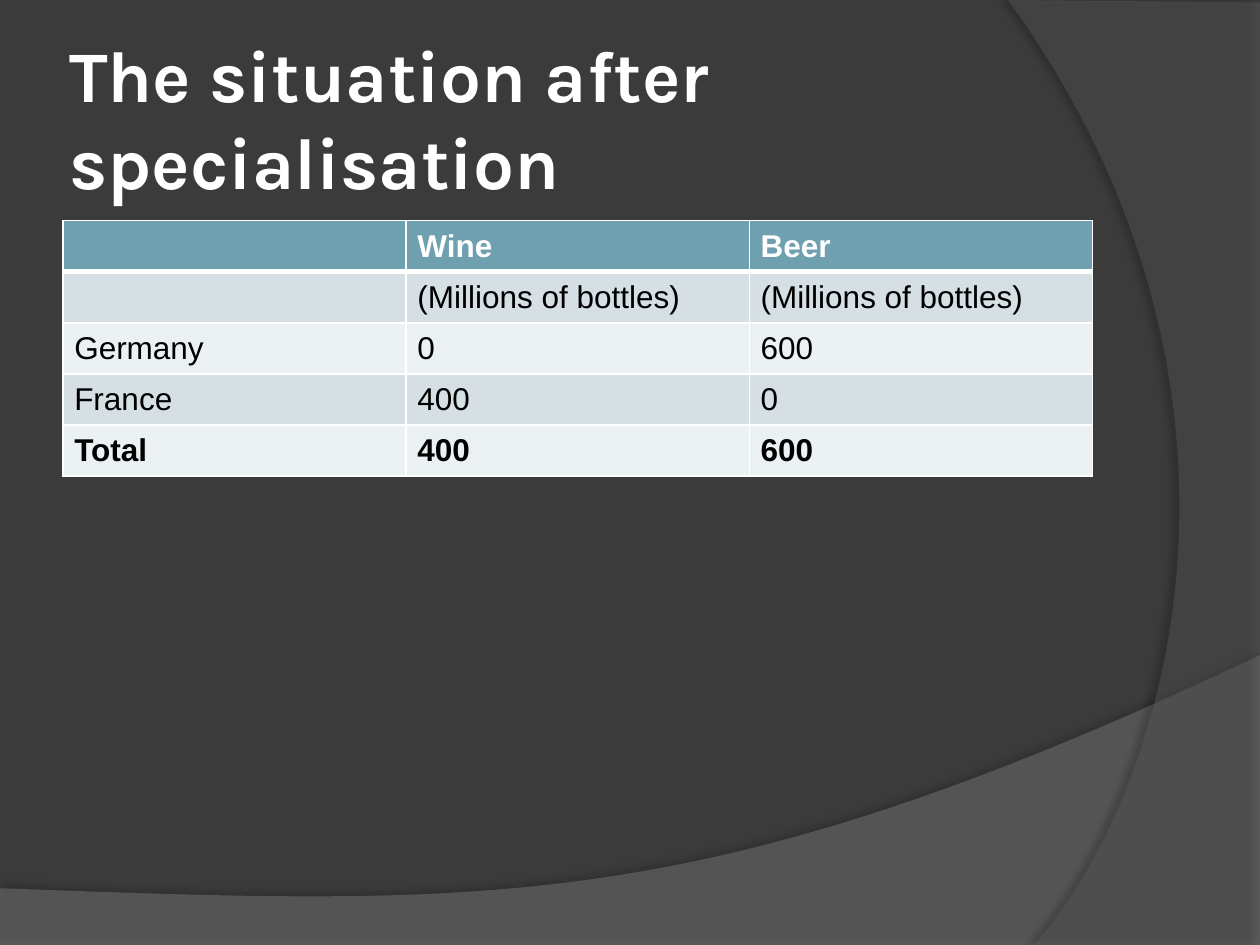
from lxml.etree import SubElement
from pptx import Presentation
from pptx.dml.color import RGBColor
from pptx.enum.text import MSO_ANCHOR as Anchor, MSO_AUTO_SIZE as AutoSize, PP_ALIGN as Align
from pptx.oxml.ns import qn
from pptx.util import Inches, Pt

WHITE, BLACK, BACKGROUND = "FFFFFF", "000000", "3B3B3B"
HEADER, BANDS = "6EA0B0", ("D5DFE4", "EBF0F2")
ROWS = [
    ("", "Wine", "Beer"),
    ("", "(Millions of bottles)", "(Millions of bottles)"),
    ("Germany", "0", "600"),
    ("France", "400", "0"),
    ("Total", "400", "600"),
]


def color(value):
    return RGBColor.from_string(value)


def curve(start, control_1, control_2, end, steps=60):
    points = []
    for step in range(steps + 1):
        t = step / steps
        weights = ((1 - t) ** 3, 3 * t * (1 - t) ** 2, 3 * t * t * (1 - t), t ** 3)
        corners = (start, control_1, control_2, end)
        points.append(tuple(sum(w * c[axis] for w, c in zip(weights, corners)) for axis in (0, 1)))
    return points


class SlideBuilder:
    """Holds the fonts and the current slide, and adds each kind of element."""

    def __init__(self, slide, title_font="Karla", body_font="Arial"):
        self.slide = slide
        self.title_font = title_font
        self.body_font = body_font

    def background(self, fill):
        self.slide.background.fill.solid()
        self.slide.background.fill.fore_color.rgb = color(fill)

    def add_run(self, paragraph, text, font, size, text_color, bold):
        run = paragraph.add_run()
        run.text = text
        run.font.name = font
        run.font.size = Pt(size)
        run.font.bold = bold
        run.font.color.rgb = color(text_color)

    def title(self, text, left, top, width, height):
        shape = self.slide.shapes.title
        shape.left, shape.top = Inches(left), Inches(top)
        shape.width, shape.height = Inches(width), Inches(height)
        frame = shape.text_frame
        frame.word_wrap = True
        frame.auto_size = AutoSize.NONE
        frame.vertical_anchor = Anchor.MIDDLE
        frame.margin_left = frame.margin_right = Inches(0.05)
        frame.margin_top = frame.margin_bottom = Inches(0.05)
        paragraph = frame.paragraphs[0]
        paragraph.alignment = Align.LEFT
        self.add_run(paragraph, text, self.title_font, 41.4, WHITE, True)

    def wave(self, points, fill, opacity, shadow_opacity, distance, direction):
        points = [(Inches(x), Inches(y)) for x, y in points]
        builder = self.slide.shapes.build_freeform(*points[0])
        builder.add_line_segments(points[1:], close=True)
        shape = builder.convert_to_shape()
        shape.fill.solid()
        shape.fill.fore_color.rgb = color(fill)
        shape.line.fill.background()
        shape.shadow.inherit = False
        properties = shape.element.spPr
        fill_color = properties.find(qn("a:solidFill")).find(qn("a:srgbClr"))
        SubElement(fill_color, qn("a:alpha"), val=str(opacity * 1000))
        shadow = SubElement(
            properties.find(qn("a:effectLst")), qn("a:outerShdw"), blurRad=str(Pt(4)),
            dist=str(Pt(distance)), dir=str(direction * 60000), rotWithShape="0")
        shadow_color = SubElement(shadow, qn("a:srgbClr"), val=BLACK)
        SubElement(shadow_color, qn("a:alpha"), val=str(shadow_opacity * 1000))

    def borders(self, cell, top, bottom):
        properties = cell._tc.get_or_add_tcPr()
        for index, (side, width) in enumerate(zip("LRTB", (1, 1, top, bottom))):
            line = SubElement(properties, qn(f"a:ln{side}"), w=str(Pt(width)))
            fill = SubElement(line, qn("a:solidFill"))
            SubElement(fill, qn("a:srgbClr"), val=WHITE)
            properties.insert(index, line)

    def table(self, rows, left, top, width, height):
        frame = self.slide.shapes.add_table(
            len(rows), len(rows[0]), Inches(left), Inches(top), Inches(width), Inches(height))
        for row_index, row in enumerate(rows):
            is_header = row_index == 0
            is_bold = is_header or row_index == len(rows) - 1
            for column_index, text in enumerate(row):
                cell = frame.table.cell(row_index, column_index)
                cell.vertical_anchor = Anchor.MIDDLE
                cell.margin_left = cell.margin_right = Inches(0.09)
                cell.margin_top = cell.margin_bottom = Inches(0.05)
                cell.fill.solid()
                cell.fill.fore_color.rgb = color(HEADER if is_header else BANDS[(row_index - 1) % 2])
                self.borders(cell, 3 if row_index == 1 else 1, 3 if is_header else 1)
                if text:
                    self.add_run(cell.text_frame.paragraphs[0], text, self.body_font, 18,
                                 WHITE if is_header else BLACK, is_bold)


def main():
    presentation = Presentation()
    presentation.slide_width, presentation.slide_height = Inches(10), Inches(7.5)
    builder = SlideBuilder(presentation.slides.add_slide(presentation.slide_layouts[5]))
    builder.background(BACKGROUND)
    bottom_edge = curve((10, 5.2), (5.59, 7.29), (3.91, 7.19), (0, 7.05))
    builder.wave([(0, 7.51), (10, 7.51), *bottom_edge], "7F7F7F", 45, 35, 3.5, 270)
    right_edge = curve((8.21, 7.5), (9.35, 6.19), (10.18, 3), (8, 0))
    builder.wave([(10, 0.02), (10, 7.5), *right_edge], "5E5E5E", 40, 45, 4, 180)
    builder.title("The situation after specialisation", 0.5, 0.3, 8.17, 1.25)
    builder.table(ROWS, 0.5, 1.75, 8.17, 2.03)
    presentation.save("out.pptx")


if __name__ == "__main__":
    main()
